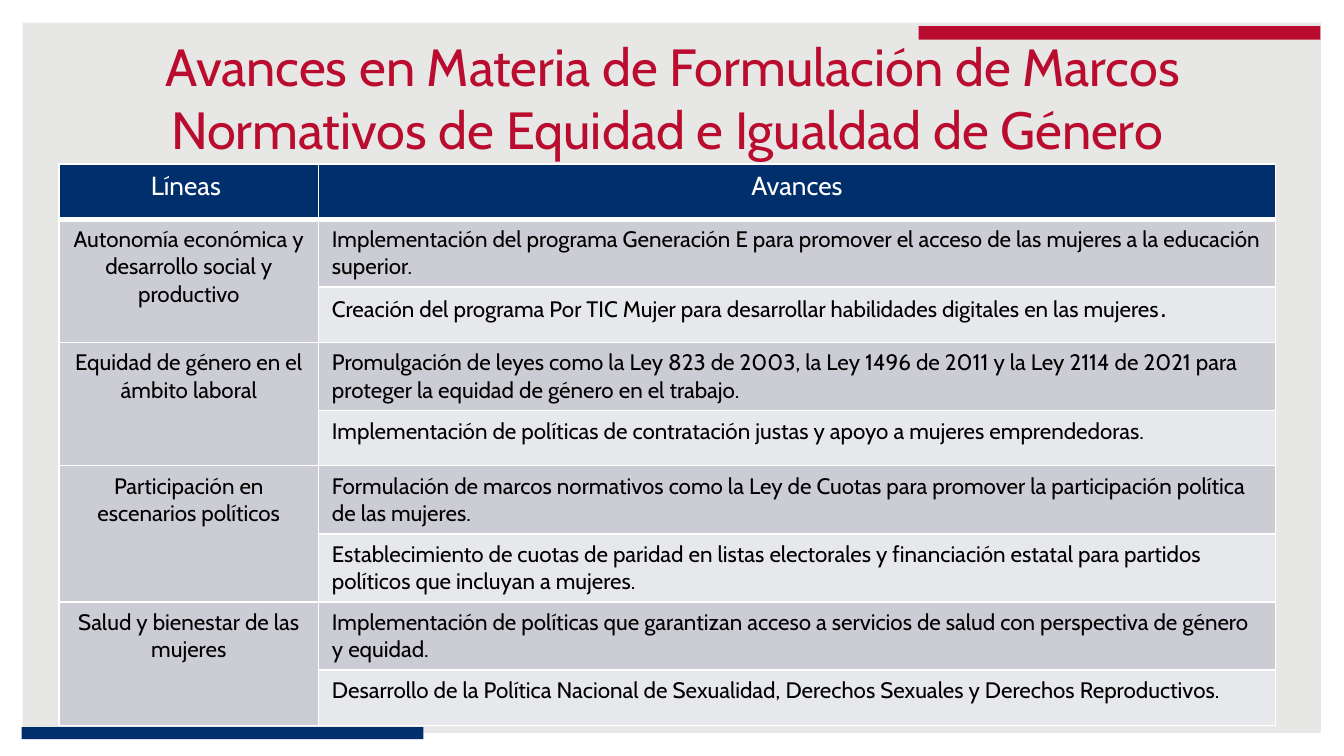
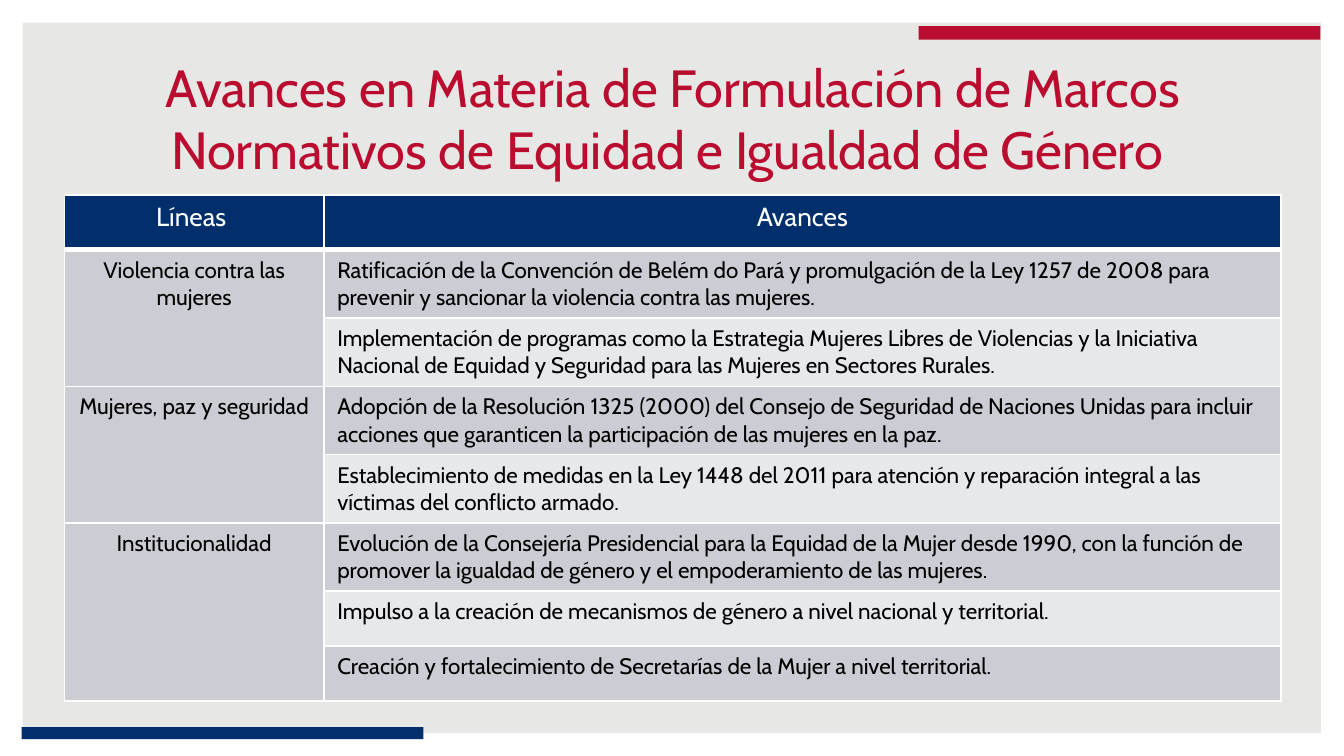
"""Build two slides with tables of advances in gender equity and equality."""
from dataclasses import dataclass

from lxml import etree
from pptx import Presentation
from pptx import util as u
from pptx.dml.color import RGBColor
from pptx.enum import shapes, text
from pptx.oxml import ns

RED, NAVY, WHITE, BLACK = "BA0C2F", "002F6C", "FFFFFF", "000000"
PAPER, BANDS = "E7E7E5", ("CCCDD4", "E7E8EB")
FONT = "Cabin"
WIDTH = u.Inches(10)
HEIGHT = u.Emu(WIDTH * 9 // 16)
TITLE = ("Avances en Materia de Formulación de Marcos Normativos "
         "de Equidad e Igualdad de Género ")
HEADERS = ("Líneas ", "Avances")
HEADER_BORDERS = {"a:lnL": 1, "a:lnR": 1, "a:lnT": 1, "a:lnB": 3}
COLUMNS = (1.93, 7.12)
ROW_HEIGHT = 0.41
CENTER, LEFT = text.PP_ALIGN.CENTER, text.PP_ALIGN.LEFT


@dataclass(frozen=True)
class Bar:
    left: float
    top: float
    width: float
    height: float
    color: str


@dataclass(frozen=True)
class Line:
    name: str
    advances: tuple[str, ...]
    full_stop: str = ""


@dataclass(frozen=True)
class Page:
    title_top: float
    table_left: float
    table_top: float
    table_height: float
    lines: tuple[Line, ...]


BARS = (
    Bar(8.28, -1.25, 0.1, 2.99, RED),
    Bar(1.61, 3.96, 0.09, 2.99, NAVY),
)

PAGES = (
    Page(0.46, 0.44, 1.22, 4.12, (
        Line("Autonomía económica y desarrollo social y productivo", (
            "Implementación del programa Generación E para promover el acceso "
            "de las mujeres a la educación superior.",
            "Creación del programa Por TIC Mujer para desarrollar habilidades "
            "digitales en las mujeres",
        ), full_stop="."),
        Line("Equidad de género en el ámbito laboral", (
            "Promulgación de leyes como la Ley 823 de 2003, la Ley 1496 de 2011 "
            "y la Ley 2114 de 2021 para proteger la equidad de género en el trabajo.",
            "Implementación de políticas de contratación justas y apoyo a "
            "mujeres emprendedoras.",
        )),
        Line("Participación en escenarios políticos", (
            "Formulación de marcos normativos como la Ley de Cuotas para "
            "promover la participación política de las mujeres.",
            "Establecimiento de cuotas de paridad en listas electorales y "
            "financiación estatal para partidos políticos que incluyan a mujeres.",
        )),
        Line("Salud y bienestar de las mujeres", (
            "Implementación de políticas que garantizan acceso a servicios de "
            "salud con perspectiva de género y equidad.",
            "Desarrollo de la Política Nacional de Sexualidad, Derechos "
            "Sexuales y Derechos Reproductivos.",
        )),
    )),
    Page(0.61, 0.48, 1.45, 3.72, (
        Line("Violencia contra las mujeres", (
            "Ratificación de la Convención de Belém do Pará y promulgación de la "
            "Ley 1257 de 2008 para prevenir y sancionar la violencia contra las mujeres.",
            "Implementación de programas como la Estrategia Mujeres Libres de "
            "Violencias y la Iniciativa Nacional de Equidad y Seguridad para las "
            "Mujeres en Sectores Rurales.",
        )),
        Line("Mujeres, paz y seguridad", (
            "Adopción de la Resolución 1325 (2000) del Consejo de Seguridad de "
            "Naciones Unidas para incluir acciones que garanticen la "
            "participación de las mujeres en la paz.",
            "Establecimiento de medidas en la Ley 1448 del 2011 para atención y "
            "reparación integral a las víctimas del conflicto armado.",
        )),
        Line("Institucionalidad", (
            "Evolución de la Consejería Presidencial para la Equidad de la Mujer "
            "desde 1990, con la función de promover la igualdad de género y el "
            "empoderamiento de las mujeres.",
            "Impulso a la creación de mecanismos de género a nivel nacional y territorial.",
            "Creación y fortalecimiento de Secretarías de la Mujer a nivel territorial.",
        )),
    )),
)


def paint(fill, color: str) -> None:
    fill.solid()
    fill.fore_color.rgb = RGBColor.from_string(color)


def add_run(p, words: str, size: float, color: str, font: str = FONT) -> None:
    r = p.add_run()
    r.text = words
    formats = {"name": font, "size": u.Pt(size), "bold": False}
    for name, value in formats.items():
        setattr(r.font, name, value)
    r.font.color.rgb = RGBColor.from_string(color)


def add_block(s, kind, box: tuple, color: str):
    sp = s.shapes.add_shape(kind, *box)
    sp.shadow.inherit = False
    sp.line.fill.background()
    paint(sp.fill, color)
    return sp


def add_bar(s, bar: Bar) -> None:
    box = tuple(map(u.Inches, (bar.left, bar.top, bar.width, bar.height)))
    sp = add_block(s, shapes.MSO_SHAPE.RECTANGLE, box, bar.color)
    sp.rotation = 90


def set_title(s, top: float) -> None:
    sp = s.shapes.title
    box = {"left": 0.36, "top": top, "width": 9.29, "height": 0.53}
    for name, value in box.items():
        setattr(sp, name, u.Inches(value))
    tf = sp.text_frame
    formats = {"word_wrap": True, "auto_size": text.MSO_AUTO_SIZE.NONE,
               "vertical_anchor": text.MSO_ANCHOR.MIDDLE}
    for name, value in formats.items():
        setattr(tf, name, value)
    p = tf.paragraphs[0]
    p.alignment = CENTER
    add_run(p, TITLE, 28, RED)


def fill_cell(cell, words: str, align, size: float = 12, color: str = BLACK):
    p = cell.text_frame.paragraphs[0]
    p.alignment = align
    add_run(p, words, size, color)
    return p


def set_borders(cell, borders: dict[str, float]) -> None:
    props = cell.fill._xPr
    for index, (side, width) in enumerate(borders.items()):
        edge = etree.Element(ns.qn(side), w=str(u.Pt(width)))
        solid = etree.SubElement(edge, ns.qn("a:solidFill"))
        etree.SubElement(solid, ns.qn("a:srgbClr"), val=WHITE)
        props.insert(index, edge)


def add_lines_table(s, page: Page) -> None:
    count = 1 + sum(len(line.advances) for line in page.lines)
    gf = s.shapes.add_table(
        count, len(COLUMNS), u.Inches(page.table_left), u.Inches(page.table_top),
        u.Inches(sum(COLUMNS)), u.Inches(page.table_height))
    table = gf.table
    for column, width in zip(table.columns, COLUMNS):
        column.width = u.Inches(width)
    for row in table.rows:
        row.height = u.Inches(ROW_HEIGHT)
    gf.height = u.Inches(page.table_height)

    for col, header in enumerate(HEADERS):
        cell = table.cell(0, col)
        fill_cell(cell, header, CENTER, 14, WHITE)
        paint(cell.fill, NAVY)
        tc_borders(cell)

    first = 1
    for line in page.lines:
        last = first + len(line.advances) - 1
        name_cell = table.cell(first, 0)
        name_cell.merge(table.cell(last, 0))
        fill_cell(name_cell, line.name, CENTER)
        for offset, advance in enumerate(line.advances):
            cell = table.cell(first + offset, 1)
            paint(table.cell(first + offset, 0).fill, BANDS[0])
            paint(cell.fill, BANDS[offset % 2])
            p = fill_cell(cell, advance, LEFT)
        if line.full_stop:
            add_run(p, line.full_stop, 14, BLACK, "Arial")
        first = last + 1


def tc_borders(cell) -> None:
    props = cell._tc.get_or_add_tcPr()
    for index, (side, width) in enumerate(HEADER_BORDERS.items()):
        edge = etree.Element(ns.qn(side), w=str(int(u.Pt(width))))
        solid = etree.SubElement(edge, ns.qn("a:solidFill"))
        etree.SubElement(solid, ns.qn("a:srgbClr"), val=WHITE)
        props.insert(index, edge)


def set_master(prs, s) -> None:
    master = prs.slide_master
    paint(master.background.fill, PAPER)
    frame = add_block(s, shapes.MSO_SHAPE.FRAME, (0, 0, WIDTH, HEIGHT), WHITE)
    frame.adjustments[0] = 0.03
    master.shapes.element.insert(2, frame.element)


def main() -> None:
    prs = Presentation()
    prs.slide_width, prs.slide_height = WIDTH, HEIGHT
    for page in PAGES:
        s = prs.slides.add_slide(prs.slide_layouts[5])
        for bar in BARS:
            add_bar(s, bar)
        set_title(s, page.title_top)
        add_lines_table(s, page)
    set_master(prs, prs.slides[0])
    prs.save("out.pptx")


if __name__ == "__main__":
    main()
